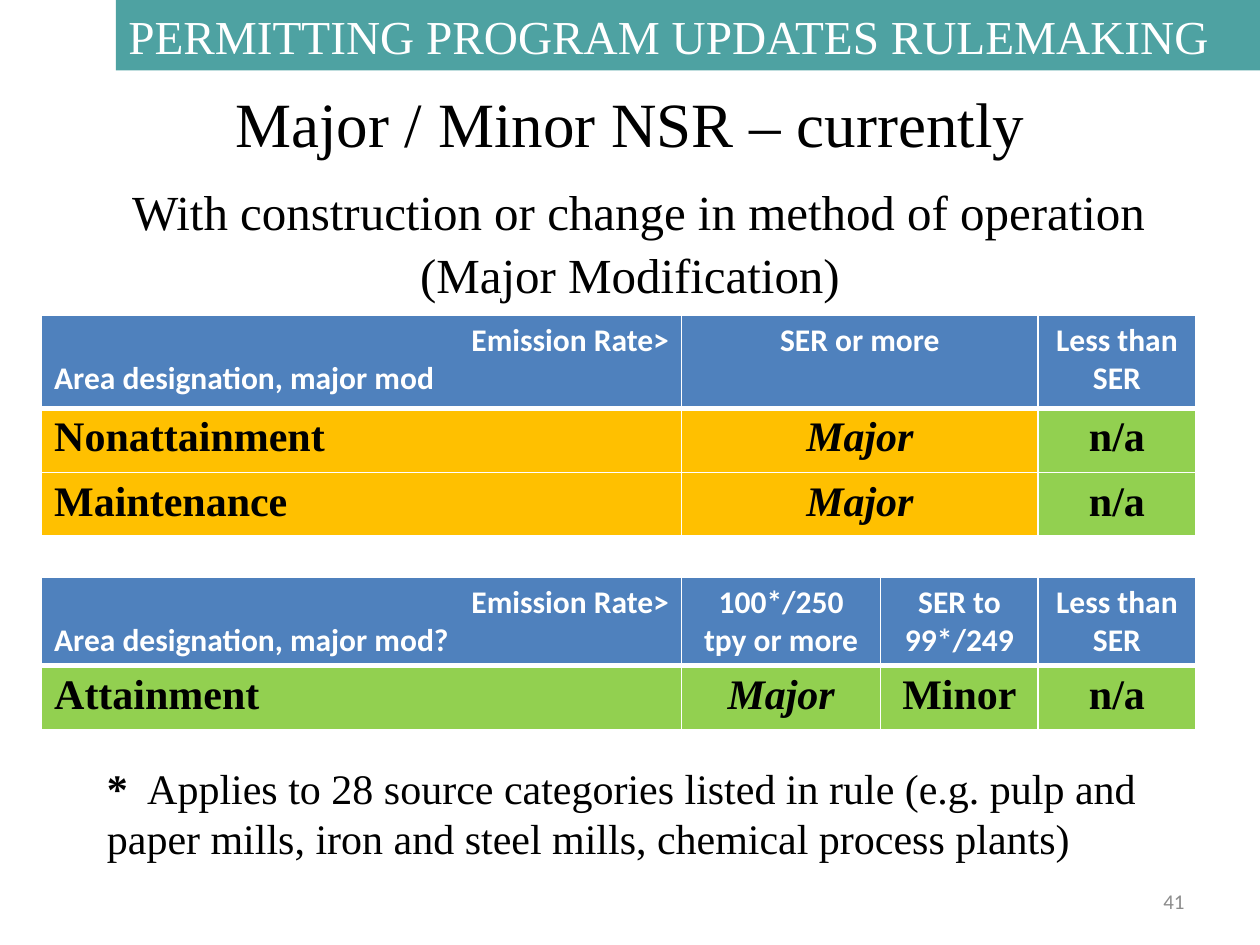
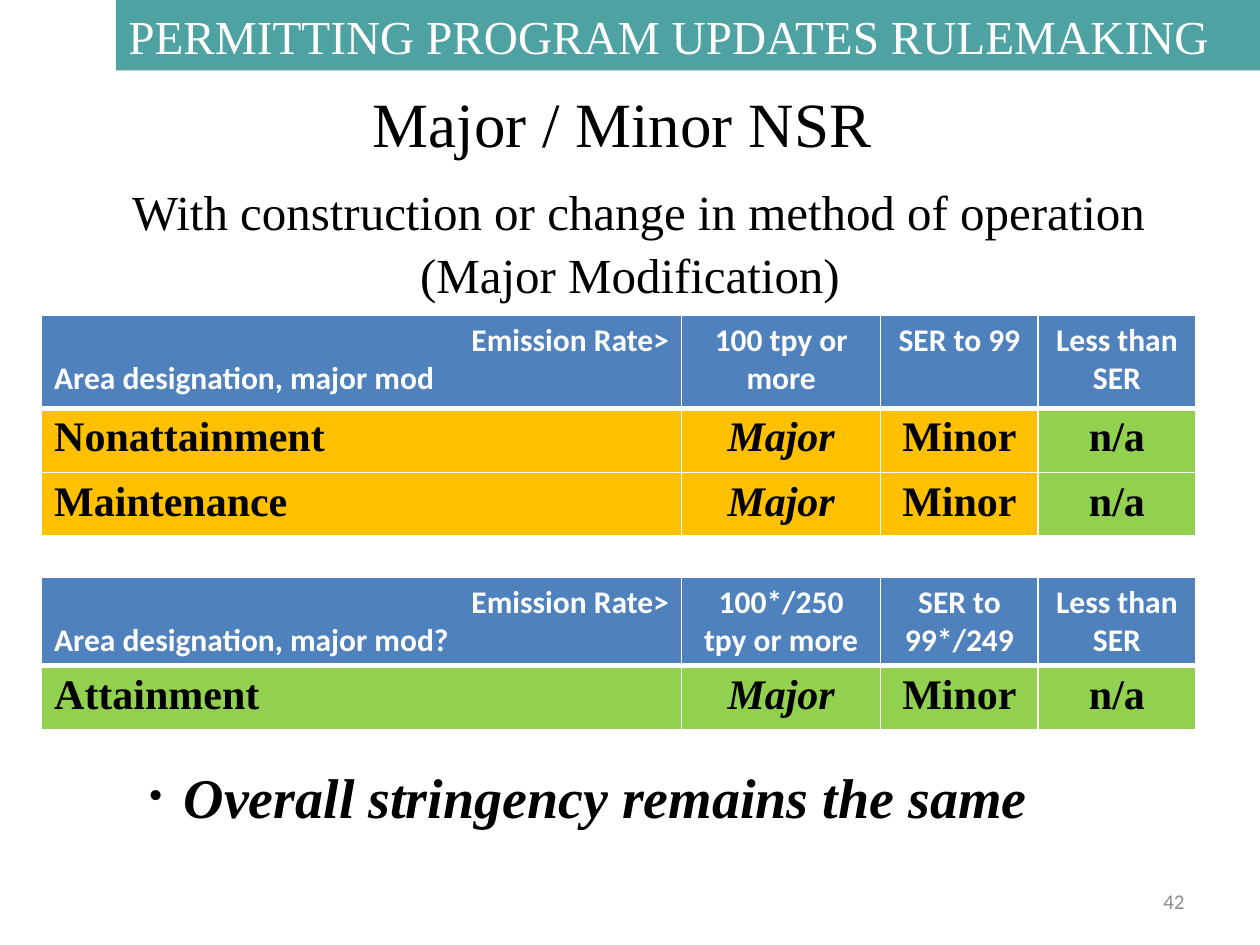
from lxml.etree import SubElement
from pptx import Presentation
from pptx.dml.color import RGBColor
from pptx.enum.shapes import MSO_SHAPE as Shape
from pptx.enum.text import MSO_ANCHOR as Anchor, PP_ALIGN as Align
from pptx.oxml.ns import qn
from pptx.util import Inches, Pt

SERIF, SANS = "Times New Roman", "Calibri"
WHITE, BLACK, GREY, TEAL = "FFFFFF", "000000", "8C8C8C", "4EA2A2"
BLUE, ORANGE, GREEN = "4F81BD", "FFC000", "92D050"
AREA_WIDTH, LEAST_WIDTH = 5.08, 1.25
SPLIT_WIDTHS = [AREA_WIDTH, 1.58, 1.25, LEAST_WIDTH]
MERGED_WIDTHS = [AREA_WIDTH, 2.83, LEAST_WIDTH]

BODY = {"name": SERIF, "size": Pt(24), "color": BLACK, "bold": False, "italic": False}
BAND = BODY | {"size": Pt(27), "color": WHITE}
TITLE = BODY | {"size": Pt(36)}
SUBTITLE = BODY | {"size": Pt(28)}
STRONG = BODY | {"bold": True}
VERDICT = STRONG | {"italic": True}
CLOSING = VERDICT | {"size": Pt(32)}
HEADER = {"name": SANS, "size": Pt(18), "color": WHITE, "bold": True}
NUMBER = {"name": SANS, "size": Pt(12), "color": GREY}


def color(value):
    """Turn a hex string into a colour."""
    return RGBColor.from_string(value)


class RuleDeck:
    """Holds the deck, its shared style and the current page."""

    def __init__(self):
        """Start an empty 10 by 7.5 inch deck."""
        self.deck = Presentation()
        self.deck.slide_width, self.deck.slide_height = Inches(10), Inches(7.5)
        self.page = None

    def add_page(self, title, number):
        """Open a page with its band, title and number."""
        self.page = self.deck.slides.add_slide(self.deck.slide_layouts[6])
        self.add_band("PERMITTING PROGRAM UPDATES RULEMAKING")
        self.add_title(title)
        para = self.add_text(7.17, 6.95, 2.33, 0.4, Anchor.MIDDLE)
        self.add_span(para, str(number), NUMBER, Align.RIGHT)

    def add_span(self, para, text, style, align=None):
        """Add a formatted span to a paragraph."""
        span = para.add_run()
        span.text = text
        for key, value in style.items():
            if key == "color":
                span.font.color.rgb = color(value)
            else:
                setattr(span.font, key, value)
        if align is not None:
            para.alignment = align

    def add_text(self, left, top, width, height, anchor=Anchor.TOP):
        """Add a wrapping text box and return its first paragraph."""
        box = self.page.shapes.add_textbox(*map(Inches, (left, top, width, height)))
        box.text_frame.word_wrap = True
        box.text_frame.vertical_anchor = anchor
        return box.text_frame.paragraphs[0]

    def add_band(self, text):
        """Add the coloured band across the top."""
        band = self.page.shapes.add_shape(Shape.RECTANGLE, *map(Inches, (0.92, 0, 9.08, 0.56)))
        band.shadow.inherit = False
        band.fill.solid()
        band.fill.fore_color.rgb = color(TEAL)
        band.line.fill.background()
        band.text_frame.vertical_anchor = Anchor.BOTTOM
        self.add_span(band.text_frame.paragraphs[0], text, BAND, Align.LEFT)

    def add_title(self, title):
        """Add the title with its two subtitle lines."""
        para = self.add_text(0.5, 0.58, 9, 1.92, Anchor.MIDDLE)
        self.add_span(para, title, TITLE, Align.CENTER)
        para.add_line_break()
        self.add_span(para, " ", BODY | {"size": Pt(40)})
        self.add_span(para, "With construction or change in method of operation", SUBTITLE)
        para.add_line_break()
        self.add_span(para, "(Major Modification)", SUBTITLE)

    def add_borders(self, cell, row):
        """Draw white cell borders, thick below the header."""
        thick = {0: "B", 1: "T"}.get(row)
        properties = cell._tc.get_or_add_tcPr()
        for side in "LRTB":
            width = Pt(3 if side == thick else 1)
            line = SubElement(properties, qn(f"a:ln{side}"), w=str(width))
            SubElement(SubElement(line, qn("a:solidFill")), qn("a:srgbClr"), val=WHITE)

    def add_cell(self, cell, row, fill, paras):
        """Fill a cell with (text, style, alignment) paragraphs."""
        self.add_borders(cell, row)
        cell.fill.solid()
        cell.fill.fore_color.rgb = color(fill)
        for index, content in enumerate(paras):
            frame = cell.text_frame
            para = frame.add_paragraph() if index else frame.paragraphs[0]
            self.add_span(para, *content)

    def add_rates(self, top, widths, heights, corner, rates, areas, fill):
        """Add a table of areas against emission rates."""
        frame = self.page.shapes.add_table(
            len(heights), len(widths), Inches(0.33), Inches(top),
            Inches(sum(widths)), Inches(sum(heights)))
        table = frame.table
        table.first_row = table.horz_banding = False
        for column, width in zip(table.columns, widths):
            column.width = Inches(width)
        for row, height in zip(table.rows, heights):
            row.height = Inches(height)
        self.add_cell(table.cell(0, 0), 0, BLUE, [
            ("Emission Rate>", HEADER, Align.RIGHT), (corner, HEADER, Align.LEFT)])
        for column, rate in enumerate(rates, 1):
            self.add_cell(table.cell(0, column), 0, BLUE, [(rate, HEADER, Align.CENTER)])
        results = ["Major", "Minor", "n/a"] if len(rates) == 3 else ["Major", "n/a"]
        for row, area in enumerate(areas, 1):
            self.add_cell(table.cell(row, 0), row, fill, [(area, STRONG, Align.LEFT)])
            for column, result in enumerate(results, 1):
                self.add_cell(table.cell(row, column), row, GREEN if result == "n/a" else fill,
                              [(result, VERDICT if result == "Major" else STRONG, Align.CENTER)])

    def add_both_tables(self, widths, rates):
        """Add the page's own table and the shared attainment table."""
        self.add_rates(2.5, widths, [0.74, 0.51, 0.44], "Area designation, major mod",
                       rates + ["Less than SER"], ["Nonattainment", "Maintenance"], ORANGE)
        self.add_rates(4.58, SPLIT_WIDTHS, [0.64, 0.51], "Area designation, major mod?",
                       ["100*/250 tpy or more", "SER to 99*/249", "Less than SER"],
                       ["Attainment"], GREEN)

    def add_footnote(self, mark, text):
        """Add a note whose text is tabbed after its mark."""
        para = self.add_text(0.75, 6, 8.75, 0.91)
        tabs = SubElement(para._p.get_or_add_pPr(), qn("a:tabLst"))
        SubElement(tabs, qn("a:tab"), pos=str(Inches(0.32)), algn="l")
        self.add_span(para, mark, STRONG)
        self.add_span(para, "\t" + text, BODY)

    def add_bullet(self, text):
        """Add the closing bullet line."""
        para = self.add_text(1.08, 6, 8, 0.64)
        properties = para._p.get_or_add_pPr()
        properties.set("marL", str(Inches(0.28)))
        properties.set("indent", str(-Inches(0.28)))
        SubElement(properties, qn("a:buSzPct"), val="75000")
        SubElement(properties, qn("a:buFont"), typeface=SERIF)
        SubElement(properties, qn("a:buChar"), char="•")
        self.add_span(para, text, CLOSING)


def main():
    """Build and save both pages."""
    rules = RuleDeck()
    rules.add_page("Major / Minor NSR – currently", 41)
    rules.add_both_tables(MERGED_WIDTHS, ["SER or more"])
    rules.add_footnote("*", "Applies to 28 source categories listed in rule (e.g. pulp and "
                            "paper mills, iron and steel mills, chemical process plants)")
    rules.add_page("Major / Minor NSR ", 42)
    rules.add_both_tables(SPLIT_WIDTHS, ["100 tpy or more", "SER to 99"])
    rules.add_bullet("Overall stringency remains the same")
    rules.deck.save("out.pptx")


if __name__ == "__main__":
    main()
